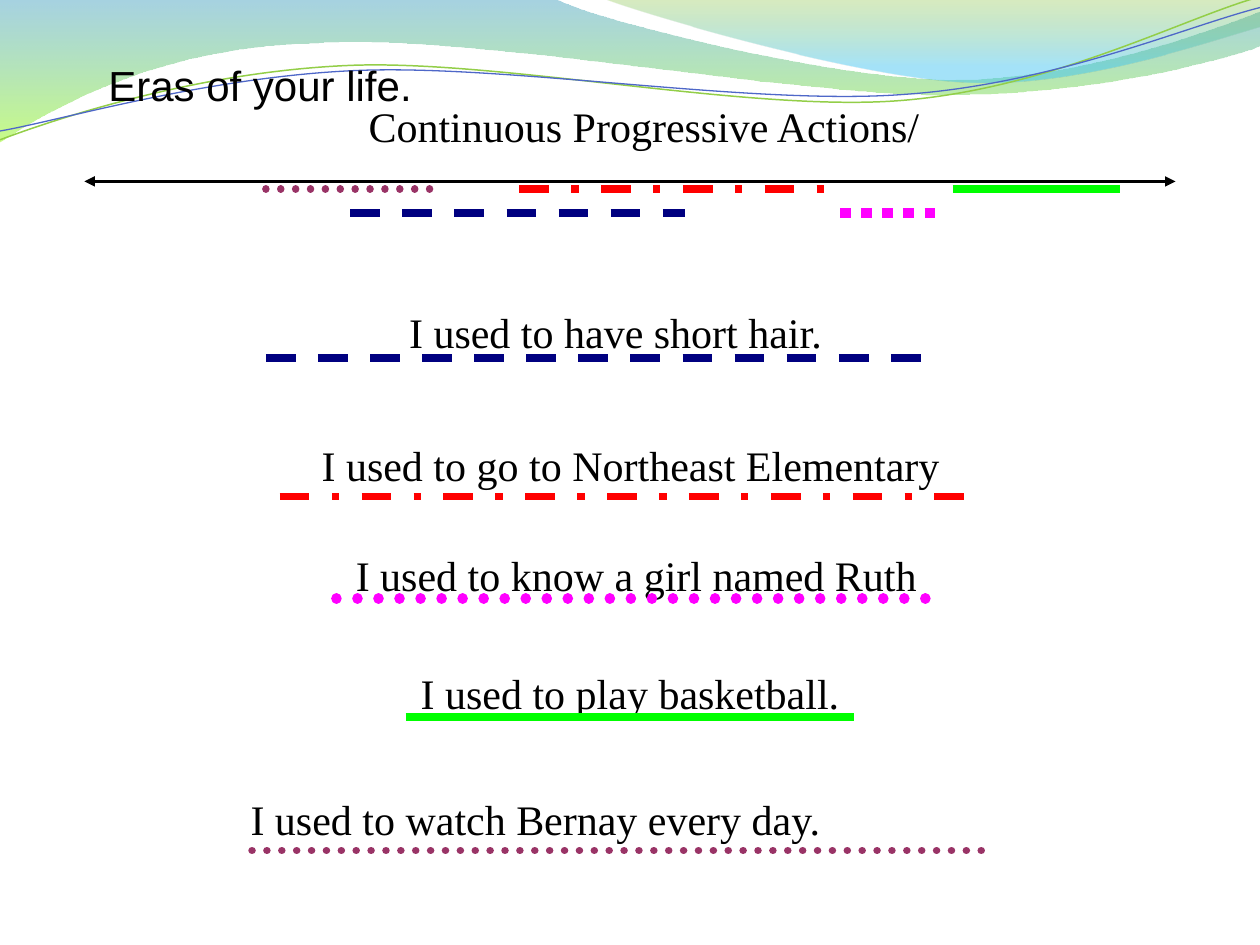
from dataclasses import dataclass

from lxml import etree
from pptx import Presentation
from pptx.dml.color import RGBColor
from pptx.enum import dml, shapes, text
from pptx.oxml.ns import qn
from pptx.util import Inches, Pt

COLORS = {
    "black": "000000", "plum": "993366", "navy": "000080", "red": "FF0000",
    "magenta": "FF00FF", "green": "00FF00", "teal": "3B9CBF", "lime": "9CFA24",
    "leaf": "7EBE2C", "sky": "39C1F1", "thin green": "93CE48", "thin blue": "4E67C8",
}
DASH = dml.MSO_LINE.DASH
DASH_DOT = dml.MSO_LINE.DASH_DOT
DOTS = dml.MSO_LINE.ROUND_DOT


@dataclass
class Era:
    """A horizontal bar that marks a span of time."""
    left: float
    right: float
    y: float
    color: str
    dash: object = None
    width: float = 4.25
    round_cap: bool = False


@dataclass
class Label:
    content: str
    left: float
    top: float
    width: float
    align: object = text.PP_ALIGN.CENTER
    font: str = "Times New Roman"
    height: float = 0.5


@dataclass
class Stop:
    position: float
    color: str
    alpha: int


def rgb(name: str) -> RGBColor:
    return RGBColor.from_string(COLORS[name])


def add_outline(slide, outline: list, close: bool):
    """Draw straight segments (2 numbers) and Bezier segments (6 numbers)."""
    start, *corners = [(Inches(segment[-2]), Inches(segment[-1])) for segment in outline]
    builder = slide.shapes.build_freeform(*start)
    builder.add_line_segments(corners, close=close)
    shape = builder.convert_to_shape()
    shape.shadow.inherit = False

    straight_lines = list(shape._element.spPr.iter(qn("a:lnTo")))
    for straight, segment in zip(straight_lines, outline[1:]):
        if len(segment) == 6:
            straight.addprevious(make_curve(shape, segment))
            straight.getparent().remove(straight)
    return shape


def make_curve(shape, segment: tuple):
    curve = etree.Element(qn("a:cubicBezTo"))
    for x, y in zip(segment[::2], segment[1::2]):
        etree.SubElement(curve, qn("a:pt"), x=str(Inches(x) - shape.left),
                         y=str(Inches(y) - shape.top))
    return curve


def add_wave(slide, outline: list, stops: list[Stop]) -> None:
    shape = add_outline(slide, outline, close=True)
    shape.line.fill.background()
    shape.fill.gradient()
    shape.fill.gradient_angle = 270
    for target, stop in zip(shape.fill.gradient_stops, stops):
        target.color.rgb = rgb(stop.color)
        target.position = stop.position
    for element, stop in zip(shape._element.spPr.iter(qn("a:srgbClr")), stops):
        etree.SubElement(element, qn("a:alpha"), val=str(stop.alpha * 1000))


def add_thin_curve(slide, outline: list, color: str, width: float) -> None:
    shape = add_outline(slide, outline, close=False)
    shape.fill.background()
    shape.line.color.rgb = rgb(color)
    shape.line.width = Pt(width)


def add_bar(slide, era: Era):
    line = slide.shapes.add_connector(
        shapes.MSO_CONNECTOR.STRAIGHT,
        Inches(era.left), Inches(era.y), Inches(era.right), Inches(era.y))
    line.line.color.rgb = rgb(era.color)
    line.line.width = Pt(era.width)
    if era.dash is not None:
        line.line.dash_style = era.dash
    if era.round_cap:
        line.line._get_or_add_ln().set("cap", "rnd")
    etree.SubElement(line._element.spPr, qn("a:effectLst"))
    return line


def add_timeline(slide) -> None:
    line = add_bar(slide, Era(0.67, 9.33, 1.44, "black", width=2))
    for end in ("a:headEnd", "a:tailEnd"):
        etree.SubElement(line.line._get_or_add_ln(), qn(end), type="triangle")


def add_label(slide, label: Label):
    box = slide.shapes.add_textbox(
        Inches(label.left), Inches(label.top), Inches(label.width), Inches(label.height))
    frame = box.text_frame
    frame.word_wrap = True
    frame.text = label.content
    paragraph = frame.paragraphs[0]
    paragraph.alignment = label.align
    paragraph.font.name = label.font
    paragraph.font.size = Pt(24)
    paragraph.font.color.rgb = rgb("black")
    return frame


def add_title(slide) -> None:
    frame = add_label(slide, Label("Eras of your life.", 0.86, 0.31, 8.5,
                                   text.PP_ALIGN.LEFT, "Arial", 0.56))
    frame.vertical_anchor = text.MSO_ANCHOR.BOTTOM
    frame.margin_left = frame.margin_right = frame.margin_bottom = 0


WAVES = [
    ([(0, 0), (4.4, -0.01), (4.76, 0.17, 6.64, 0.63, 7.58, 0.63),
      (8.53, 0.63, 9.58, 0.26, 10, 0.09), (10.01, 0.36),
      (9.83, 0.44, 8.7, 0.76, 7.46, 0.75), (6.22, 0.75, 3.82, 0.28, 2.57, 0.34),
      (1.29, 0.36, 0.46, 0.83, -0.01, 1.13)],
     [Stop(0, "teal", 45), Stop(1, "lime", 55)]),
    ([(4.79, -0.01), (5.09, 0.11, 6.82, 0.62, 7.69, 0.65),
      (8.56, 0.69, 9.61, 0.32, 10, 0.21), (10, 0)],
     [Stop(0, "leaf", 30), Stop(0.8, "sky", 45)]),
]
THIN_CURVES = [
    ([(0, 1.11), (0.48, 0.93, 1.58, 0.57, 2.77, 0.52),
      (3.95, 0.47, 5.93, 0.89, 7.13, 0.8), (8.33, 0.71, 9.38, 0.15, 9.98, -0.02)],
     "thin green", 0.85),
    ([(0, 1.04), (0.47, 0.96, 1.64, 0.61, 2.83, 0.56),
      (4.03, 0.51, 5.97, 0.84, 7.17, 0.75), (8.36, 0.67, 9.41, 0.21, 10, 0.06)],
     "thin blue", 0.75),
]
TIMELINE_ERAS = [
    Era(2.11, 3.44, 1.5, "plum", DOTS, round_cap=True),
    Era(2.78, 5.44, 1.69, "navy", DASH),
    Era(4.12, 6.67, 1.5, "red", DASH_DOT),
    Era(6.67, 7.44, 1.69, "magenta", DOTS, 6),
    Era(7.56, 8.89, 1.5, "green"),
]
SENTENCES = [
    (Label("I used to have short hair.", 1.33, 2.38, 7.11),
     Era(2.11, 7.44, 2.84, "navy", DASH)),
    (Label("I used to go to Northeast Elementary", 1.17, 3.44, 7.67),
     Era(2.22, 7.78, 3.94, "red", DASH_DOT)),
    (Label("I used to know a girl named Ruth", 1.44, 4.31, 7.22),
     Era(2.67, 7.44, 4.75, "magenta", DOTS, 6, True)),
    (Label("I used to play basketball.", 1.39, 5.25, 7.22),
     Era(3.22, 6.78, 5.69, "green")),
    (Label("I used to watch Bernay every day.", 1.89, 6.25, 7.33, text.PP_ALIGN.LEFT),
     Era(2, 7.8, 6.75, "plum", DOTS, round_cap=True)),
]


def main() -> None:
    presentation = Presentation()
    presentation.slide_width, presentation.slide_height = Inches(10), Inches(7.5)
    slide = presentation.slides.add_slide(presentation.slide_layouts[6])

    # Wave decoration along the top
    for outline, stops in WAVES:
        add_wave(slide, outline, stops)
    for outline, color, width in THIN_CURVES:
        add_thin_curve(slide, outline, color, width)

    # Timeline with its eras
    add_timeline(slide)
    for era in TIMELINE_ERAS:
        add_bar(slide, era)
    add_label(slide, Label("Continuous Progressive Actions/", 1, 0.75, 8.22))

    # Sentences, each underlined in the style of its era
    for label, era in SENTENCES:
        add_label(slide, label)
        add_bar(slide, era)

    add_title(slide)
    presentation.save("out.pptx")


if __name__ == "__main__":
    main()
